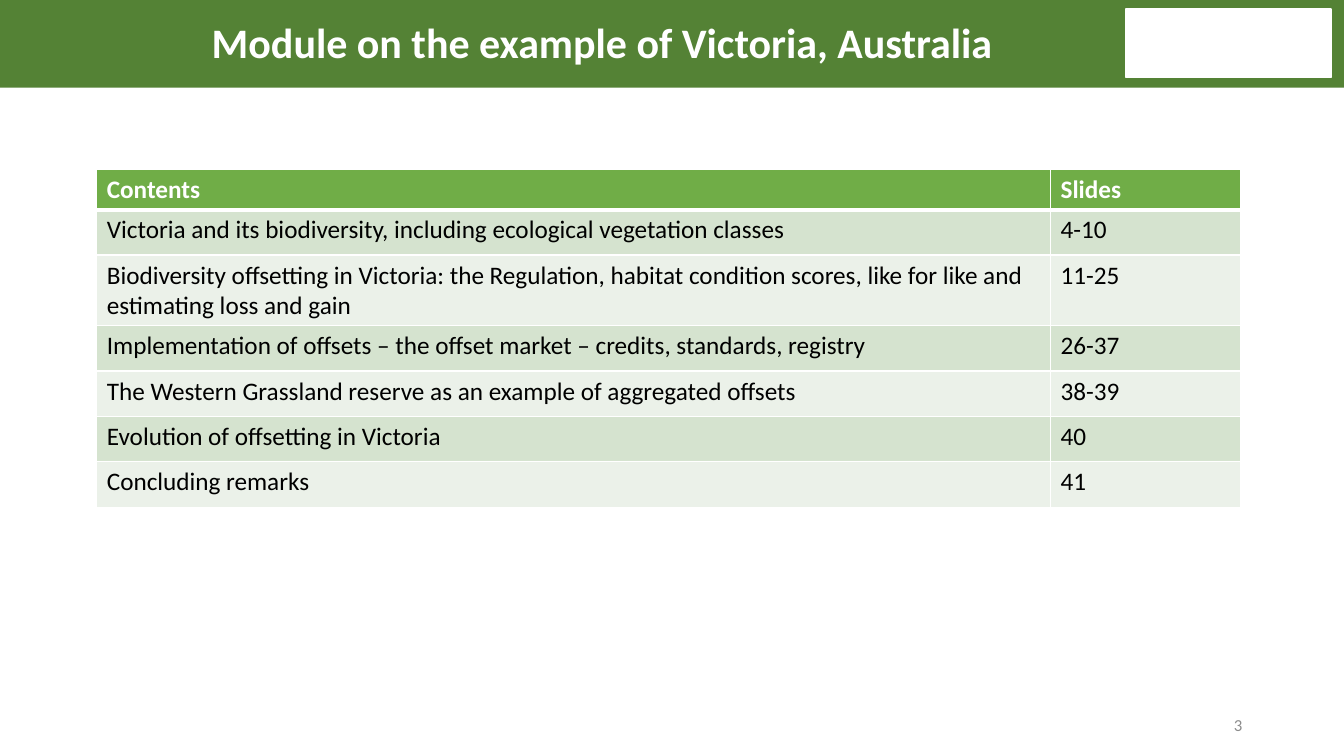
from dataclasses import dataclass

from lxml import etree
from pptx import Presentation
from pptx.dml.color import RGBColor
from pptx.enum.shapes import MSO_SHAPE
from pptx.enum.text import MSO_ANCHOR, PP_ALIGN
from pptx.oxml.ns import qn
from pptx.util import Inches, Pt

RECTANGLE = MSO_SHAPE.RECTANGLE
MIDDLE = MSO_ANCHOR.MIDDLE
LEFT, CENTER, RIGHT = PP_ALIGN.LEFT, PP_ALIGN.CENTER, PP_ALIGN.RIGHT


@dataclass(frozen=True)
class Theme:
    font: str = "Calibri"
    banner: str = "548235"
    header: str = "70AD47"
    bands: tuple = ("D5E3CF", "EBF1E9")
    white: str = "FFFFFF"
    black: str = "000000"
    gray: str = "8C8C8C"
    title_size: int = 30
    table_size: int = 18
    number_size: int = 12
    rule: int = 1
    header_rule: int = 3


THEME = Theme()

CONTENTS = [
    ("Contents", "Slides"),
    ("Victoria and its biodiversity, including ecological vegetation classes", "4-10"),
    ("Biodiversity offsetting in Victoria: the Regulation, habitat condition scores, "
     "like for like and estimating loss and gain", "11-25"),
    ("Implementation of offsets – the offset market – credits, standards, registry", "26-37"),
    ("The Western Grassland reserve as an example of aggregated offsets", "38-39"),
    ("Evolution of offsetting in Victoria", "40"),
    ("Concluding remarks", "41"),
]
SLIDES_COLUMN = 1.88
HEADER_HEIGHT, ROW_HEIGHT, TWO_LINE_HEIGHT = 0.4, 0.45, 0.7
TWO_LINE_ROW = 2


def write(frame, text, *, size, color, bold=False, align=LEFT, spacing=None):
    frame.word_wrap = True
    paragraph = frame.paragraphs[0]
    paragraph.alignment = align
    if spacing:
        paragraph.line_spacing = spacing
    run = paragraph.add_run()
    run.text = text
    run.font.name = THEME.font
    run.font.size = Pt(size)
    run.font.bold = bold
    run.font.color.rgb = RGBColor.from_string(color)


def add_label(slide, box, text, **text_format):
    label = slide.shapes.add_textbox(*map(Inches, box))
    label.text_frame.vertical_anchor = MIDDLE
    write(label.text_frame, text, **text_format)


def add_panel(slide, box, color, line=None):
    panel = slide.shapes.add_shape(RECTANGLE, *map(Inches, box))
    panel.shadow.inherit = False
    panel.fill.solid()
    panel.fill.fore_color.rgb = RGBColor.from_string(color)
    if line:
        panel.line.color.rgb = RGBColor.from_string(line)
        panel.line.width = Pt(THEME.rule)
    else:
        panel.line.fill.background()


def add_banner(slide, box, title):
    left, top, width, height = box
    add_panel(slide, box, THEME.banner)
    add_panel(slide, (left + width - 2.16, top + 0.12, 2.03, 0.68), THEME.white, THEME.white)
    add_label(slide, (left + 0.8, top + 0.03, 10.35, height), title, size=THEME.title_size,
              color=THEME.white, bold=True, align=CENTER, spacing=0.9)


def set_borders(cell, top, bottom):
    """Draw white cell borders; top and bottom are widths in points."""
    properties = cell._tc.get_or_add_tcPr()
    widths = {"a:lnL": THEME.rule, "a:lnR": THEME.rule, "a:lnT": top, "a:lnB": bottom}
    for side, width in widths.items():
        border = etree.SubElement(properties, qn(side), w=str(Pt(width)))
        fill = etree.SubElement(border, qn("a:solidFill"))
        etree.SubElement(fill, qn("a:srgbClr"), val=THEME.white)


def add_contents_table(slide, box, entries):
    width = box[2]
    table = slide.shapes.add_table(len(entries), 2, *map(Inches, box)).table
    table.columns[0].width = Inches(width - SLIDES_COLUMN)
    table.columns[1].width = Inches(SLIDES_COLUMN)
    heights = {0: HEADER_HEIGHT, TWO_LINE_ROW: TWO_LINE_HEIGHT}
    for row, entry in enumerate(entries):
        is_header = row == 0
        table.rows[row].height = Inches(heights.get(row, ROW_HEIGHT))
        background = THEME.header if is_header else THEME.bands[(row - 1) % 2]
        for column, text in enumerate(entry):
            cell = table.cell(row, column)
            set_borders(cell, top=THEME.header_rule if row == 1 else THEME.rule,
                        bottom=THEME.header_rule if is_header else THEME.rule)
            cell.fill.solid()
            cell.fill.fore_color.rgb = RGBColor.from_string(background)
            write(cell.text_frame, text, size=THEME.table_size, bold=is_header,
                  color=THEME.white if is_header else THEME.black)


def main():
    deck = Presentation()
    deck.slide_width, deck.slide_height = Inches(13.33), Inches(7.5)
    slide = deck.slides.add_slide(deck.slide_layouts[6])
    add_label(slide, (11.54, 7.04, 0.88, 0.31), "3",
              size=THEME.number_size, color=THEME.gray, align=RIGHT)
    add_banner(slide, (0, -0.03, 13.33, 0.9), "Module on the example of Victoria, Australia")
    add_contents_table(slide, (0.96, 1.68, 11.34, 3.33), CONTENTS)
    deck.save("out.pptx")


if __name__ == "__main__":
    main()
